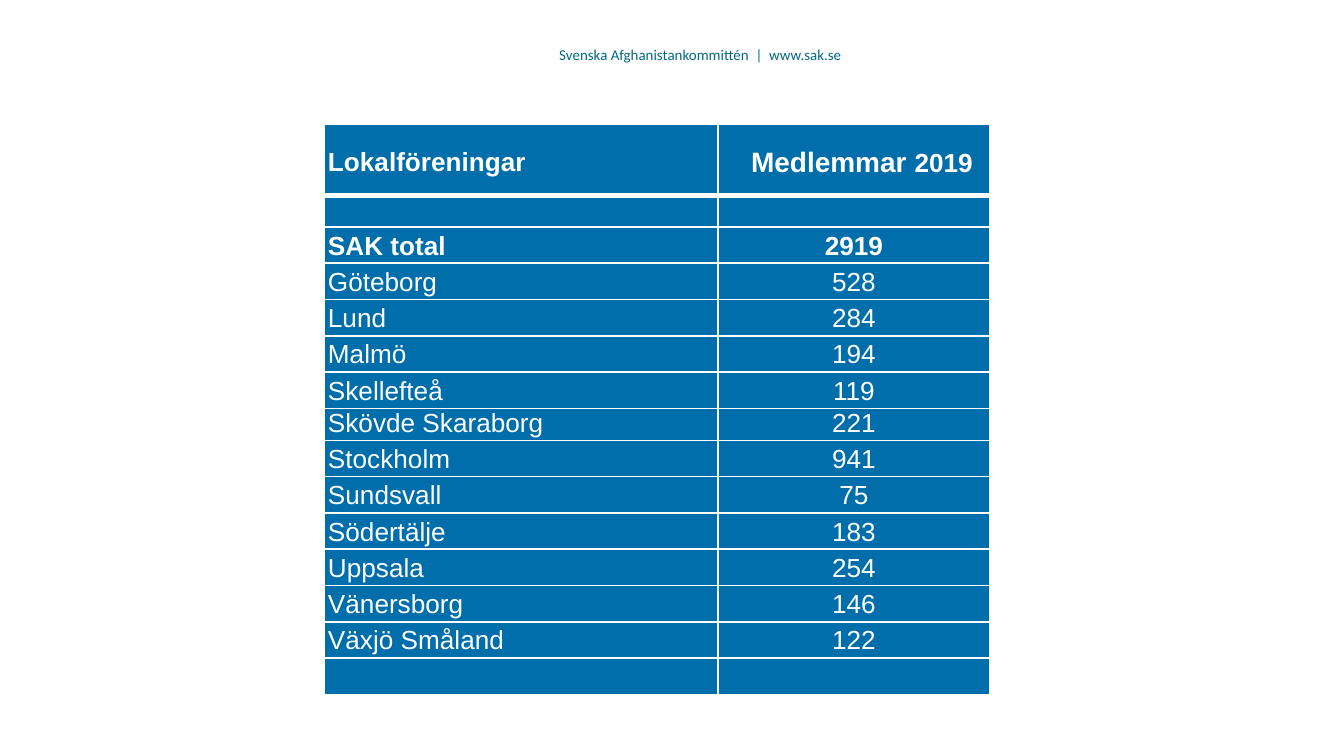
from pptx import Presentation
from pptx.dml.color import RGBColor
from pptx.enum.text import MSO_ANCHOR, PP_ALIGN
from pptx.oxml import parse_xml
from pptx.oxml.ns import nsdecls
from pptx.util import Emu, Pt

WHITE = RGBColor(0xFF, 0xFF, 0xFF)
BLUE = RGBColor(0x00, 0x6E, 0xAB)
TEAL = RGBColor(0x00, 0x69, 0x83)

ROWS = [
    ("SAK total", "2919"), ("Göteborg", "528"), ("Lund", "284"),
    ("Malmö", "194"), ("Skellefteå", "119"), ("Skövde Skaraborg", "221"),
    ("Stockholm", "941"), ("Sundsvall", "75"), ("Södertälje", "183"),
    ("Uppsala", "254"), ("Vänersborg", "146"), ("Växjö Småland", "122"),
]
TIGHT = "Skövde Skaraborg"


def px(num):
    """Turn slide pixels into EMU."""
    return Emu(round(num * 9144000 / 1344))


def write(frame, *parts, font="Arial", color=WHITE, bold=False,
          align=PP_ALIGN.LEFT, line=1.0):
    """Write (text, size) parts as one formatted paragraph."""
    para = frame.paragraphs[0]
    para.alignment = align
    para.line_spacing = line
    for text, size in parts:
        run = para.add_run()
        run.text = text
        run.font.name = font
        run.font.size = Pt(size)
        run.font.bold = bold
        run.font.color.rgb = color


def empty(cell, size):
    """Set the font size that gives an empty cell its height."""
    para = cell.text_frame.paragraphs[0]._p
    para.append(parse_xml(f'<a:endParaRPr {nsdecls("a")} sz="{size * 100}"/>'))


def style(cell, top, low):
    """Fill a cell and draw its borders with the given top and low widths."""
    cell.margin_left = cell.margin_right = px(4)
    cell.margin_top = cell.margin_bottom = 0
    cell.fill.solid()
    cell.fill.fore_color.rgb = BLUE
    props = cell._tc.get_or_add_tcPr()
    sides = (("lnL", 1), ("lnR", 1), ("lnT", top), ("lnB", low))
    for spot, (side, width) in enumerate(sides):
        props.insert(spot, parse_xml(
            f'<a:{side} {nsdecls("a")} w="{Pt(width)}"><a:solidFill>'
            f'<a:srgbClr val="{WHITE}"/></a:solidFill></a:{side}>'))


def banner(slide, left, top, width, height):
    """Place the line of text above the table."""
    box = slide.shapes.add_textbox(px(left), px(top), px(width), px(height))
    box.text_frame.word_wrap = True
    write(box.text_frame, ("Svenska Afghanistankommittén  |  www.sak.se", 8),
          font="Calibri", color=TEAL)


def members(slide, left, top, width, height):
    """Place the table of local groups and their members."""
    count = len(ROWS) + 3
    shape = slide.shapes.add_table(
        count, 2, px(left), px(top), px(width), px(height))
    table = shape.table
    table.first_row = table.horz_banding = False
    first = 394
    for col, size in zip(table.columns, (first, width - first)):
        col.width = px(size)

    head, gap, tight = 72, 31, 32
    step = (height - head - gap - tight) / len(ROWS)
    sizes = [head, gap]
    sizes += [tight if name == TIGHT else step for name, _ in ROWS] + [step]
    for index, size in enumerate(sizes):
        table.rows[index].height = px(size)
        for cell in table.rows[index].cells:
            style(cell, 3 if index == 1 else 1, 3 if index == 0 else 1)

    name, total = table.rows[0].cells
    name.vertical_anchor = total.vertical_anchor = MSO_ANCHOR.MIDDLE
    total.margin_left = px(20)
    write(name.text_frame, ("Lokalföreningar", 14), bold=True, line=1.15)
    write(total.text_frame, ("Medlemmar ", 15), ("2019", 14), bold=True,
          align=PP_ALIGN.CENTER, line=1.15)

    for index, texts in enumerate(ROWS, 2):
        line = 1.0 if texts[0] == TIGHT else 1.15
        aligns = (PP_ALIGN.LEFT, PP_ALIGN.CENTER)
        for cell, text, align in zip(table.rows[index].cells, texts, aligns):
            write(cell.text_frame, (text, 14), bold=index == 2,
                  align=align, line=line)

    for index in (1, count - 1):
        for cell in table.rows[index].cells:
            empty(cell, 10)


def main():
    """Build and save the slide."""
    deck = Presentation()
    deck.slide_width, deck.slide_height = px(1344), px(756)
    slide = deck.slides.add_slide(deck.slide_layouts[6])
    banner(slide, 546, 39, 353, 32)
    members(slide, 324, 124, 666, 571)
    deck.save("out.pptx")


if __name__ == "__main__":
    main()
